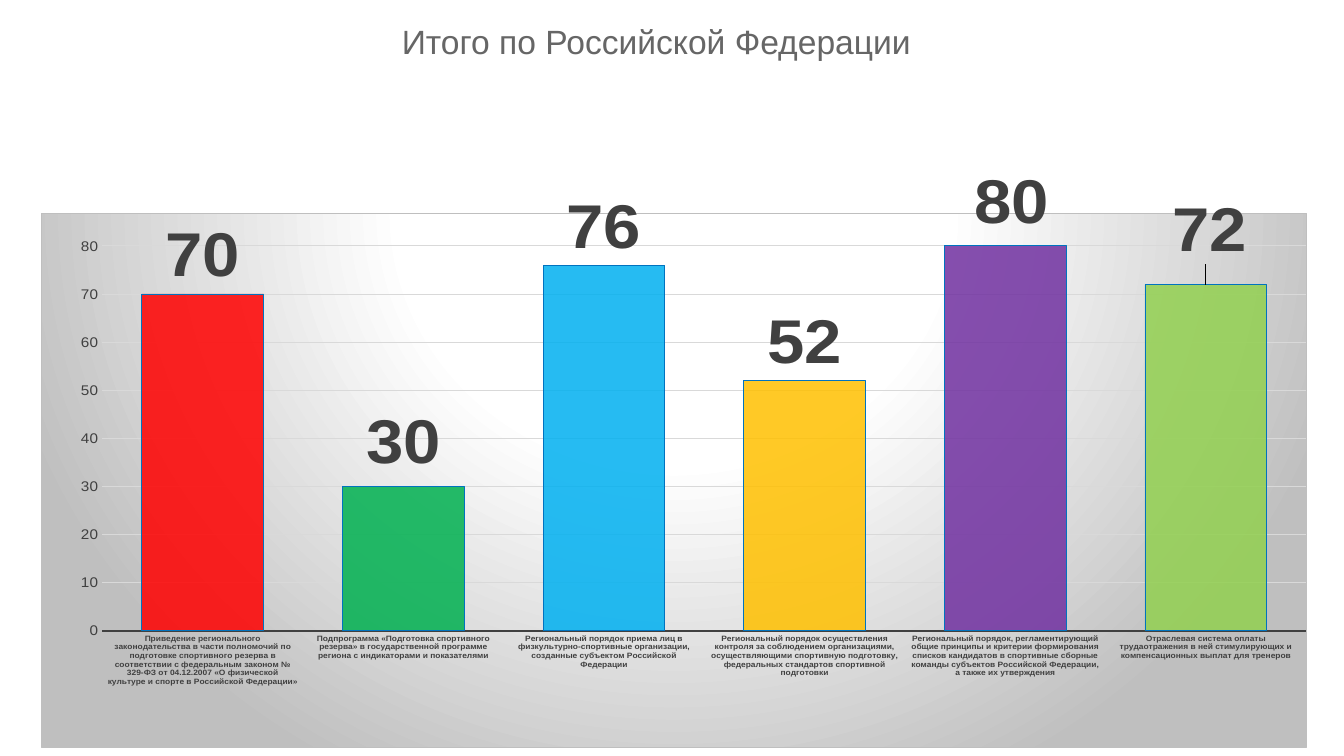
"""Build a slide with a column chart of totals for the Russian Federation."""
import pptx
import pptx.chart.data
import pptx.dml.color
import pptx.enum.chart
import pptx.enum.text
import pptx.oxml
import pptx.oxml.ns
import pptx.util
from pptx.util import Cm, Pt

TITLE = "Итого по Российской Федерации"
COLUMNS = [
    {"category": "Приведение регионального законодательства в части полномочий по подготовке "
                 "спортивного резерва в соответствии с федеральным законом № 329-ФЗ от 04.12.2007 "
                 "«О физической культуре и спорте в Российской Федерации»",
     "value": 70, "color": "FF0000", "label_shift": (0, 0)},
    {"category": "Подпрограмма «Подготовка спортивного резерва» в государственной программе "
                 "региона с индикаторами и показателями",
     "value": 30, "color": "00B050", "label_shift": (0, -0.01)},
    {"category": "Региональный порядок приема лиц в физкультурно-спортивные организации, "
                 "созданные субъектом Российской Федерации",
     "value": 76, "color": "00B0F0", "label_shift": (0, 0)},
    {"category": "Региональный порядок осуществления контроля за соблюдением организациями, "
                 "осуществляющими спортивную подготовку, федеральных стандартов спортивной подготовки",
     "value": 52, "color": "FFC000", "label_shift": (0, 0)},
    {"category": "Региональный порядок, регламентирующий общие принципы и критерии формирования "
                 "списков кандидатов в спортивные сборные команды субъектов Российской Федерации, "
                 "а также их утверждения",
     "value": 80, "color": "7030A0", "label_shift": (0.005, -0.01)},
    {"category": "Отраслевая система оплаты трудаотражения в ней стимулирующих и "
                 "компенсационных выплат для тренеров",
     "value": 72, "color": "92D050", "label_shift": (0.003, -0.03)},
]
THEME = {
    "font": "Arial", "title": "666666", "text": "404040", "grid": "D9D9D9",
    "outline": "0073BF", "border": "BFBFBF", "column_alpha": 85000,
    "gradient": [(0, "FFFFFF"), (39000, "FFFFFF"), (100000, "BFBFBF")],
    "title_size": 24, "category_size": 6, "value_size": 10.9, "label_size": 48,
    "thin": 0.69, "axis": 1.37,
}
SLIDE_SIZE = (Cm(33.87), Cm(19.05))
TITLE_BOX = (Cm(0.13), Cm(0.33), Cm(32.82), Cm(1.52))
CHART_BOX = (Cm(1.04), Cm(4.22), Cm(31.9), Cm(14.63))
PLOT_BOX = {"x": 0.048, "y": 0.015, "w": 0.952, "h": 0.766}


def rgb(name):
    return pptx.dml.color.RGBColor.from_string(name)


def style_font(font, size, color, bold=False):
    font.name, font.size, font.bold = THEME["font"], Pt(size), bold
    font.color.rgb = rgb(color)


def style_line(line, color, width):
    line.color.rgb = rgb(color)
    line.width = Pt(width)


def chart_xml(content):
    declarations = pptx.oxml.ns.nsdecls("c", "a")
    tag, rest = content.split(">", 1)
    return pptx.oxml.parse_xml(f"{tag} {declarations}>{rest}")


def manual_layout(values, inner=False):
    parts = ""
    if inner:
        parts = '<c:layoutTarget val="inner"/><c:xMode val="edge"/><c:yMode val="edge"/>'
    parts += "".join(f'<c:{key} val="{value}"/>' for key, value in values.items())
    return chart_xml(f"<c:layout><c:manualLayout>{parts}</c:manualLayout></c:layout>")


def add_title(slide):
    frame = slide.shapes.add_textbox(*TITLE_BOX).text_frame
    frame.word_wrap = True
    frame.vertical_anchor = pptx.enum.text.MSO_ANCHOR.MIDDLE
    frame.text = TITLE
    paragraph = frame.paragraphs[0]
    paragraph.alignment = pptx.enum.text.PP_ALIGN.CENTER
    paragraph.line_spacing = 0.9
    style_font(paragraph.runs[0].font, THEME["title_size"], THEME["title"])


def style_axes(chart):
    category_axis, value_axis = chart.category_axis, chart.value_axis
    for axis in (category_axis, value_axis):
        axis.major_tick_mark = axis.minor_tick_mark = pptx.enum.chart.XL_TICK_MARK.NONE
    style_font(category_axis.tick_labels.font, THEME["category_size"], THEME["text"], True)
    style_line(category_axis.format.line, THEME["text"], THEME["axis"])
    style_font(value_axis.tick_labels.font, THEME["value_size"], THEME["text"])
    value_axis.format.line.fill.background()
    value_axis.minimum_scale, value_axis.maximum_scale = 0, 85
    value_axis.major_unit = 10
    style_line(value_axis.major_gridlines.format.line, THEME["grid"], THEME["thin"])


def style_column(point, column):
    fill = point.format.fill
    fill.solid()
    fill.fore_color.rgb = rgb(column["color"])
    style_line(point.format.line, THEME["outline"], THEME["thin"])
    solid = point.format.fill._xPr.find(pptx.oxml.ns.qn("a:solidFill"))
    solid[0].append(chart_xml("<a:alpha>" + "</a:alpha>"))
    solid[0][0].set("val", str(THEME["column_alpha"]))
    label = point.data_label
    style_font(label.font, THEME["label_size"], THEME["text"], True)
    label.position = pptx.enum.chart.XL_LABEL_POSITION.OUTSIDE_END
    shift_x, shift_y = column["label_shift"]
    if shift_x or shift_y:
        label_element = label._get_or_add_dLbl()
        label_element.insert(1, manual_layout({"x": shift_x, "y": shift_y}))


def style_background(chart):
    stops = "".join(f'<a:gs pos="{position}"><a:srgbClr val="{color}"/></a:gs>'
                    for position, color in THEME["gradient"])
    background = chart_xml(
        f'<c:spPr><a:gradFill><a:gsLst>{stops}</a:gsLst><a:path path="circle">'
        '<a:fillToRect l="50000" t="-80000" r="50000" b="180000"/></a:path></a:gradFill>'
        f'<a:ln w="{Pt(THEME["thin"])}"><a:solidFill><a:srgbClr val="{THEME["border"]}"/>'
        '</a:solidFill></a:ln></c:spPr>')
    chart._chartSpace.chart.addnext(background)
    plot_area = chart._chartSpace.chart.plotArea
    for layout in plot_area.findall(pptx.oxml.ns.qn("c:layout")):
        plot_area.remove(layout)
    plot_area.insert(0, manual_layout(PLOT_BOX, inner=True))


def add_column_chart(slide):
    data = pptx.chart.data.CategoryChartData()
    data.categories = [column["category"] for column in COLUMNS]
    data.add_series("Series 1", [column["value"] for column in COLUMNS])
    kind = pptx.enum.chart.XL_CHART_TYPE.COLUMN_CLUSTERED
    chart = slide.shapes.add_chart(kind, *CHART_BOX, data).chart
    chart.has_title = chart.has_legend = False
    style_font(chart.font, 10, "000000")
    plot = chart.plots[0]
    plot.gap_width = 65
    plot.vary_by_categories = False
    style_axes(chart)
    for index, column in enumerate(COLUMNS):
        style_column(plot.series[0].points[index], column)
    labels = plot.series[0].data_labels
    labels.show_value = True
    style_font(labels.font, THEME["label_size"], THEME["text"], True)
    style_background(chart)


def main():
    presentation = pptx.Presentation()
    presentation.slide_width, presentation.slide_height = SLIDE_SIZE
    slide = presentation.slides.add_slide(presentation.slide_layouts[6])
    add_title(slide)
    add_column_chart(slide)
    presentation.save("out.pptx")


if __name__ == "__main__":
    main()
